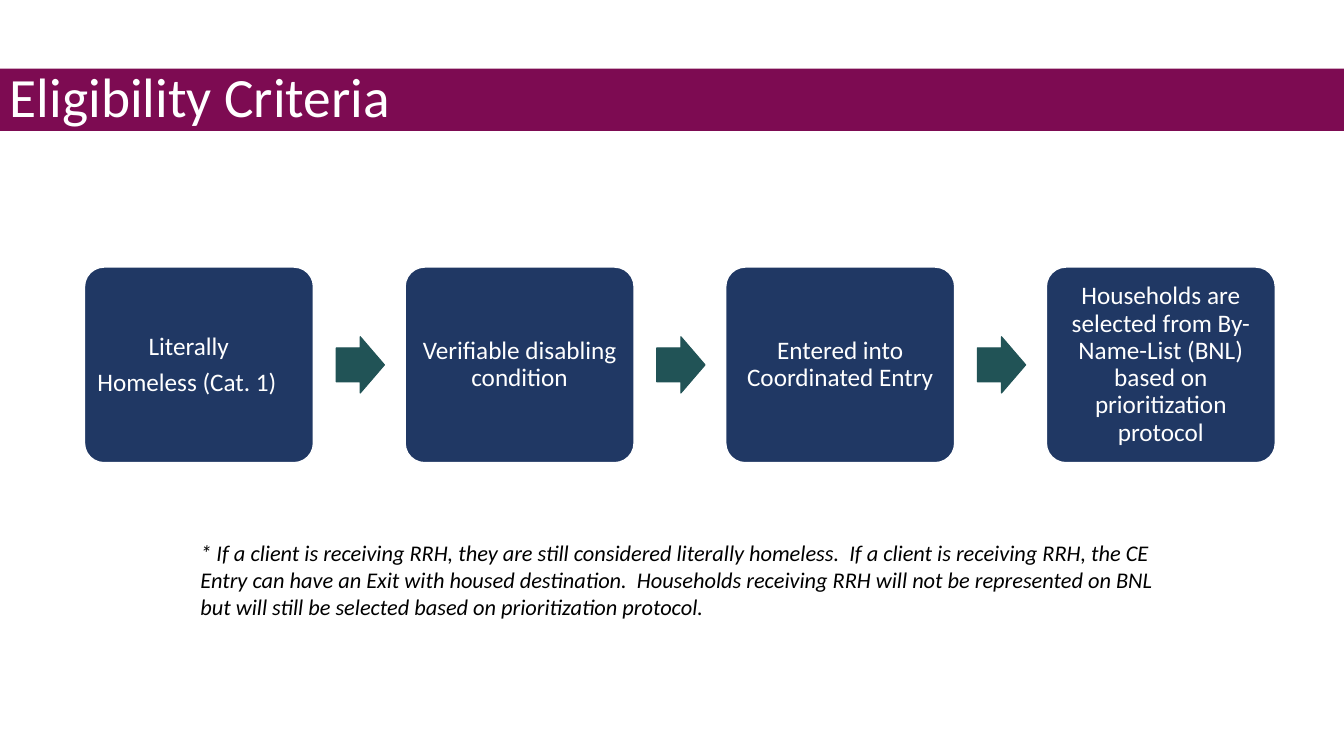
from pptx import Presentation
from pptx.dml.color import RGBColor
from pptx.enum.shapes import MSO_SHAPE as Shape
from pptx.enum.text import MSO_ANCHOR as Anchor, PP_ALIGN as Align
from pptx.util import Cm, Pt

HEADING = "Eligibility Criteria"
CRITERIA = [
    {"lines": [("Literally", 1.29), ("Homeless (Cat. 1)", 0)], "align": Align.LEFT},
    {"lines": [("Verifiable disabling condition", 0)], "align": Align.CENTER},
    {"lines": [("Entered into Coordinated Entry", 0)], "align": Align.CENTER},
    {"lines": [("Households are selected from By-Name-List (BNL) based on "
                "prioritization protocol", 0)], "align": Align.CENTER},
]
FOOTNOTE = (
    "* If a client is receiving RRH, they are still considered literally homeless.  "
    "If a client is receiving RRH, the CE Entry can have an Exit with housed destination.  "
    "Households receiving RRH will not be represented on BNL but will still be selected "
    "based on prioritization protocol."
)
THEME = {
    "font": "Calibri",
    "banner": "7D0B52", "step": "203864", "arrow": "215356",
    "light": "FFFFFF", "dark": "000000",
    "heading_size": 39.6, "step_size": 18, "footnote_size": 16,
}

SLIDE_W, SLIDE_H = 33.87, 19.05
STEP_LEFT, STEP_TOP, STEP_W, STEP_H = 2.13, 6.73, 5.77, 4.93
STEP_PITCH = 8.08
ARROW_OFFSET, ARROW_W, ARROW_H = 6.34, 1.22, 1.42
STEP_INSET = 0.18


def color(name):
    return RGBColor.from_string(THEME[name])


def add_block(slide, kind, box, fill, line=None, width=1, adjustments=()):
    block = slide.shapes.add_shape(kind, *map(Cm, box))
    block.shadow.inherit = False
    block.fill.solid()
    block.fill.fore_color.rgb = color(fill)
    if line:
        block.line.color.rgb = color(line)
        block.line.width = Pt(width)
    else:
        block.line.fill.background()
    for i, value in enumerate(adjustments):
        block.adjustments[i] = value
    return block


def write(paragraph, words, size, ink, align=Align.LEFT, italic=False):
    paragraph.alignment = align
    run = paragraph.add_run()
    run.text = words
    run.font.name = THEME["font"]
    run.font.size = Pt(THEME[size])
    run.font.color.rgb = color(ink)
    run.font.italic = italic


def add_heading(slide):
    banner = add_block(slide, Shape.RECTANGLE, (0, 1.73, SLIDE_W, 1.57), "banner")
    frame = banner.text_frame
    frame.word_wrap = True
    frame.vertical_anchor = Anchor.MIDDLE
    frame.paragraphs[0].line_spacing = 0.9
    write(frame.paragraphs[0], HEADING, "heading_size", "light")


def add_step(slide, left, criterion):
    step = add_block(slide, Shape.ROUNDED_RECTANGLE, (left, STEP_TOP, STEP_W, STEP_H),
                     "step", "light", 1, (0.1,))
    frame = step.text_frame
    frame.word_wrap = True
    frame.vertical_anchor = Anchor.MIDDLE
    frame.margin_left = frame.margin_right = Cm(STEP_INSET)
    frame.margin_top = frame.margin_bottom = Cm(STEP_INSET)
    for i, (words, indent) in enumerate(criterion["lines"]):
        paragraph = frame.add_paragraph() if i else frame.paragraphs[0]
        paragraph.line_spacing = 0.9
        paragraph.space_after = Pt(0.35 * THEME["step_size"])
        if indent:
            paragraph._p.get_or_add_pPr().set("marL", str(Cm(indent)))
        write(paragraph, words, "step_size", "light", criterion["align"])


def add_process(slide):
    arrow_top = STEP_TOP + (STEP_H - ARROW_H) / 2
    for i, criterion in enumerate(CRITERIA):
        left = STEP_LEFT + i * STEP_PITCH
        add_step(slide, left, criterion)
        if i < len(CRITERIA) - 1:
            add_block(slide, Shape.RIGHT_ARROW,
                      (left + ARROW_OFFSET, arrow_top, ARROW_W, ARROW_H),
                      "arrow", "arrow", 0.75, (0.6, 0.5))


def add_footnote(slide):
    footnote = slide.shapes.add_textbox(Cm(4.8), Cm(13.46), Cm(24.69), Cm(3))
    footnote.text_frame.word_wrap = True
    write(footnote.text_frame.paragraphs[0], FOOTNOTE, "footnote_size", "dark", italic=True)


def main():
    deck = Presentation()
    deck.slide_width, deck.slide_height = Cm(SLIDE_W), Cm(SLIDE_H)
    slide = deck.slides.add_slide(deck.slide_layouts[6])
    add_heading(slide)
    add_process(slide)
    add_footnote(slide)
    deck.save("out.pptx")


if __name__ == "__main__":
    main()
